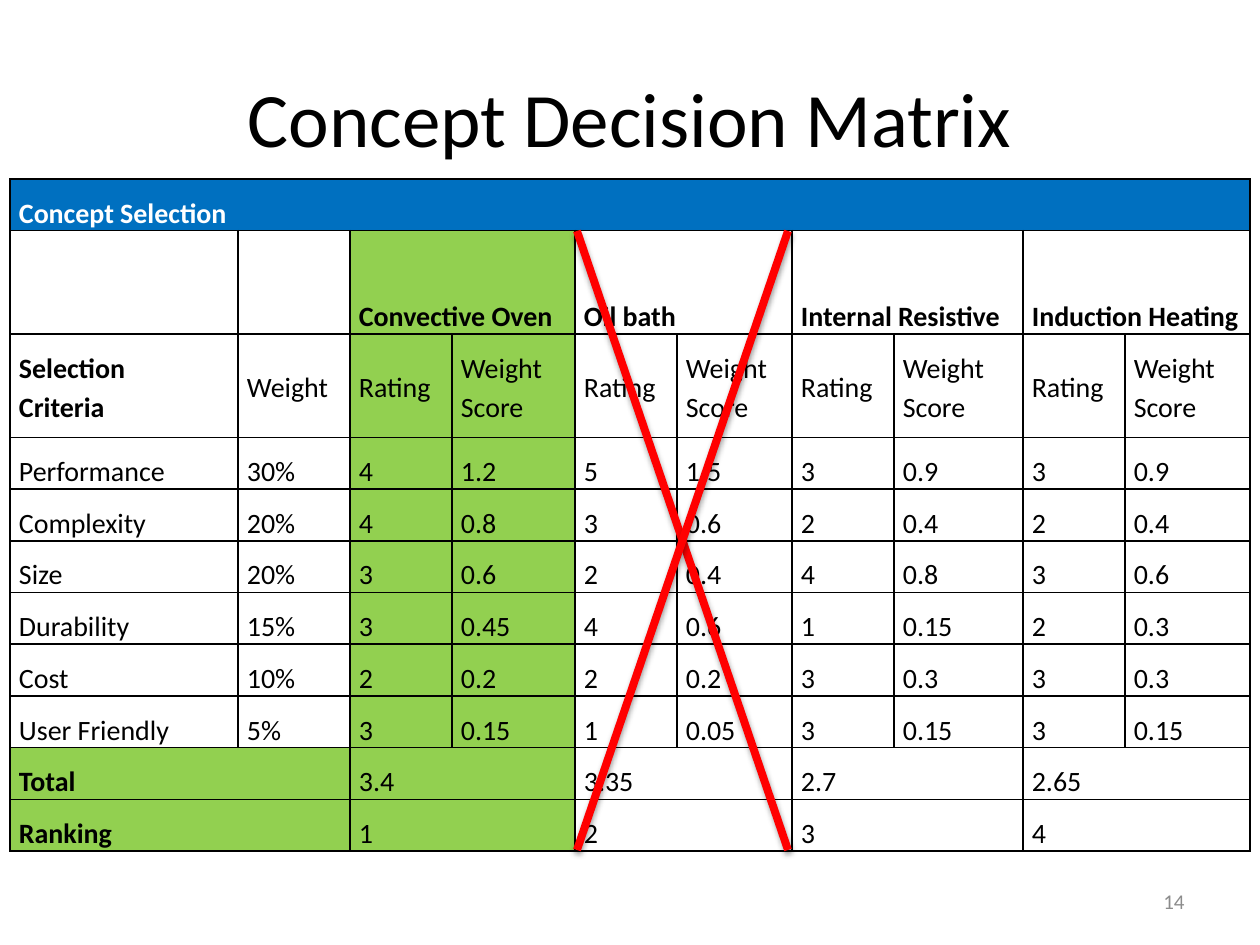
from dataclasses import dataclass

from lxml import etree
from pptx import Presentation
from pptx.dml.color import RGBColor
from pptx.enum.shapes import MSO_CONNECTOR as Link
from pptx.enum.text import MSO_ANCHOR as Anchor, PP_ALIGN as Align
from pptx.oxml import parse_xml
from pptx.oxml.ns import qn
from pptx.util import Pt

DPI = 126
FONT = "Calibri"
BLACK, WHITE, BLUE, GREEN, RED = "000000", "FFFFFF", "0070C0", "92D050", "FF0000"
GRAY = "8C8C8C"
NS = 'xmlns:a="http://schemas.openxmlformats.org/drawingml/2006/main"'

LEFT, TOP, HIGH = 10, 179, 672
COLS = [228, 112, 102, 123, 102, 115, 102, 129, 102, 125]
UNITS = [1, 2, 2] + [1] * 8  # row heights in shares of the table


@dataclass
class Rule:
    name: str
    weight: int  # percent


@dataclass
class Idea:
    name: str
    marks: list[int]
    fill: str | None = None


@dataclass
class Label:
    text: str
    box: tuple[int, int, int, int]
    size: int
    color: str
    align: Align


@dataclass
class Stroke:
    start: tuple[int, int]
    end: tuple[int, int]


RULES = [Rule("Performance", 30), Rule("Complexity", 20), Rule("Size", 20),
         Rule("Durability", 15), Rule("Cost", 10), Rule("User Friendly", 5)]
IDEAS = [Idea("Convective Oven", [4, 4, 3, 3, 2, 3], GREEN),
         Idea("Oil bath", [5, 3, 2, 4, 2, 1]),
         Idea("Internal Resistive", [3, 2, 4, 1, 3, 3]),
         Idea("Induction Heating", [3, 2, 3, 2, 3, 3])]
LABELS = [
    Label("Concept Decision Matrix", (63, 38, 1134, 157), 44, BLACK, Align.CENTER),
    Label("14", (903, 876, 294, 50), 12, GRAY, Align.RIGHT),
]
CROSS = [Stroke((577, 231), (788, 850)), Stroke((788, 231), (577, 850))]


def px(n: float) -> int:
    return round(n * 914400 / DPI)


def rgb(code: str) -> RGBColor:
    return RGBColor.from_string(code)


def style(para, size: int, color: str, align: Align, bold: bool = False) -> None:
    para.alignment = align
    for run in para.runs:
        font = run.font
        font.name, font.size, font.bold = FONT, Pt(size), bold
        font.color.rgb = rgb(color)


def draw_label(slide, label: Label) -> None:
    frame = slide.shapes.add_textbox(*map(px, label.box)).text_frame
    frame.word_wrap = True
    frame.vertical_anchor = Anchor.MIDDLE
    frame.text = label.text
    style(frame.paragraphs[0], label.size, label.color, label.align)


def draw_stroke(slide, stroke: Stroke) -> None:
    line = slide.shapes.add_connector(
        Link.STRAIGHT, *map(px, stroke.start + stroke.end))
    line.line.color.rgb = rgb(RED)
    line.line.width = Pt(4.5)
    line._element.spPr.append(parse_xml(
        f'<a:effectLst {NS}><a:outerShdw blurRad="40000" dist="20000" '
        'dir="5400000" rotWithShape="0"><a:srgbClr val="000000">'
        '<a:alpha val="38000"/></a:srgbClr></a:outerShdw></a:effectLst>'))


def edge(cell) -> None:
    props = cell._tc.get_or_add_tcPr()
    for i, side in enumerate(("lnL", "lnR", "lnT", "lnB")):
        line = etree.Element(qn(f"a:{side}"), w=str(Pt(1)))
        fill = etree.SubElement(line, qn("a:solidFill"))
        etree.SubElement(fill, qn("a:srgbClr"), val=BLACK)
        props.insert(i, line)


def put(grid, row: int, col: int, text: str, fill: str | None = None,
        span: int = 1, bold: bool = False, color: str = BLACK,
        anchor: Anchor = Anchor.BOTTOM) -> None:
    cell = grid.cell(row, col)
    if span > 1:
        cell.merge(grid.cell(row, col + span - 1))
    cell.margin_left = cell.margin_right = px(9)
    cell.margin_top = cell.margin_bottom = 0
    cell.vertical_anchor = anchor
    if fill:
        cell.fill.solid()
        cell.fill.fore_color.rgb = rgb(fill)
    para = cell.text_frame.paragraphs[0]
    para.text = text
    para.line_spacing = 1.15
    style(para, 16, color, Align.JUSTIFY, bold)


def draw_matrix(slide) -> None:
    grid = slide.shapes.add_table(
        len(UNITS), len(COLS), px(LEFT), px(TOP), px(sum(COLS)), px(HIGH)).table
    grid.first_row = grid.horz_banding = False
    for col, wide in zip(grid.columns, COLS):
        col.width = px(wide)
    for row, unit in zip(grid.rows, UNITS):
        row.height = px(HIGH * unit / sum(UNITS))
    for cell in grid.iter_cells():
        cell.fill.background()
        edge(cell)

    # Headings and criteria
    first = 3
    total = first + len(RULES)
    rank = total + 1
    mid = Anchor.MIDDLE
    put(grid, 0, 0, "Concept Selection", BLUE, len(COLS), True, WHITE)
    put(grid, 2, 0, "Selection \vCriteria", bold=True, anchor=mid)
    put(grid, 2, 1, "Weight", anchor=mid)
    for row, rule in enumerate(RULES, first):
        put(grid, row, 0, rule.name)
        put(grid, row, 1, f"{rule.weight}%")
    put(grid, total, 0, "Total", GREEN, 2, True)
    put(grid, rank, 0, "Ranking", GREEN, 2, True)

    # One pair of columns for each concept
    sums = [sum(m * r.weight for m, r in zip(i.marks, RULES)) for i in IDEAS]
    order = sorted(sums, reverse=True)
    for n, (idea, points) in enumerate(zip(IDEAS, sums)):
        col, fill = 2 + 2 * n, idea.fill
        put(grid, 1, col, idea.name, fill, 2, True)
        put(grid, 2, col, "Rating", fill, anchor=mid)
        put(grid, 2, col + 1, "Weight\vScore", fill, anchor=mid)
        for row, (mark, rule) in enumerate(zip(idea.marks, RULES), first):
            put(grid, row, col, str(mark), fill)
            put(grid, row, col + 1, f"{mark * rule.weight / 100:g}", fill)
        put(grid, total, col, f"{points / 100:g}", fill, 2)
        put(grid, rank, col, str(order.index(points) + 1), fill, 2)


def main() -> None:
    deck = Presentation()
    deck.slide_width, deck.slide_height = px(1260), px(945)
    slide = deck.slides.add_slide(deck.slide_layouts[6])
    for label in LABELS:
        draw_label(slide, label)
    draw_matrix(slide)
    # Red cross over the rejected concept
    for stroke in CROSS:
        draw_stroke(slide, stroke)
    deck.save("out.pptx")


if __name__ == "__main__":
    main()
